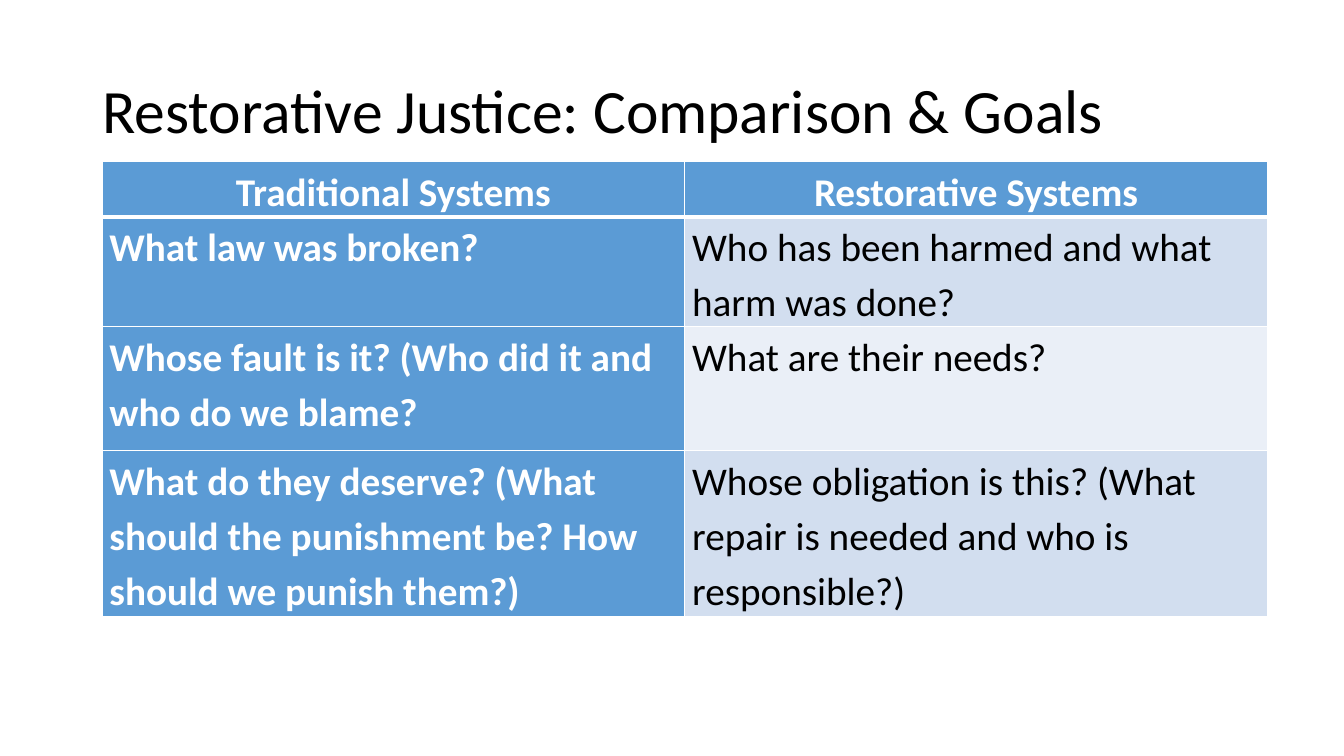
from pptx import Presentation
from pptx.dml.color import RGBColor
from pptx.enum.text import MSO_ANCHOR, PP_ALIGN
from pptx.oxml import parse_xml
from pptx.oxml.ns import nsdecls
from pptx.util import Pt

COLORS = {
    "text": "000000",
    "white": "FFFFFF",
    "blue": "5B9BD5",
    "band_dark": "D2DEEF",
    "band_light": "EAEFF7",
}
FONT = "Calibri"
COLUMN_WIDTH = 416.25
ROW_HEIGHTS = [39.3, 78.6, 88.6, 117.9]
ROWS = [
    ("Traditional Systems", "Restorative Systems"),
    ("What law was broken?", "Who has been harmed and what harm was done?"),
    ("Whose fault is it? (Who did it and who do we blame?", "What are their needs?"),
    (
        "What do they deserve? (What should the punishment be? How should we punish them?)",
        "Whose obligation is this? (What repair is needed and who is responsible?)",
    ),
]


def color(name):
    return RGBColor.from_string(COLORS[name])


def write(para, text, size, color_name, bold=False):
    span = para.add_run()
    span.text = text
    span.font.name = FONT
    span.font.size = Pt(size)
    span.font.bold = bold
    span.font.color.rgb = color(color_name)


def add_title(page, text):
    title = page.shapes.title
    title.left, title.top, title.width, title.height = Pt(66), Pt(28.8), Pt(828), Pt(104.4)
    title.text_frame.vertical_anchor = MSO_ANCHOR.MIDDLE
    para = title.text_frame.paragraphs[0]
    para.alignment = PP_ALIGN.LEFT
    para.line_spacing = 0.9
    write(para, text, 44, "text")


def add_borders(cell, widths):
    """Draw white borders; widths maps the sides L, R, T, B to points."""
    for side, width in widths.items():
        cell._tc.get_or_add_tcPr().append(parse_xml(
            f'<a:ln{side} {nsdecls("a")} w="{Pt(width)}"><a:solidFill>'
            f'<a:srgbClr val="{COLORS["white"]}"/></a:solidFill></a:ln{side}>'
        ))


def fill_cell(cell, text, row, column):
    is_header = row == 0
    is_strong = is_header or column == 0
    band = "band_dark" if row % 2 else "band_light"
    add_borders(cell, {
        "L": 1, "R": 1,
        "T": 3 if row == 1 else 1,
        "B": 3 if is_header else 1,
    })
    cell.fill.solid()
    cell.fill.fore_color.rgb = color("blue" if is_strong else band)
    cell.margin_left = cell.margin_right = Pt(5.4)
    cell.margin_top = cell.margin_bottom = Pt(0)
    para = cell.text_frame.paragraphs[0]
    para.alignment = PP_ALIGN.CENTER if is_header else PP_ALIGN.LEFT
    para.line_spacing = 1.15
    write(para, text, 28, "white" if is_strong else "text", is_strong)


def add_comparison(page):
    frame = page.shapes.add_table(
        len(ROWS), 2, Pt(72.8), Pt(115.4), Pt(2 * COLUMN_WIDTH), Pt(sum(ROW_HEIGHTS))
    )
    table = frame.table
    table.first_col = True
    for column in table.columns:
        column.width = Pt(COLUMN_WIDTH)
    for row, (texts, height) in enumerate(zip(ROWS, ROW_HEIGHTS)):
        table.rows[row].height = Pt(height)
        for column, text in enumerate(texts):
            fill_cell(table.cell(row, column), text, row, column)


def main():
    deck = Presentation()
    deck.slide_width, deck.slide_height = Pt(960), Pt(540)
    page = deck.slides.add_slide(deck.slide_layouts[5])
    add_title(page, "Restorative Justice: Comparison & Goals")
    add_comparison(page)
    deck.save("out.pptx")


if __name__ == "__main__":
    main()
